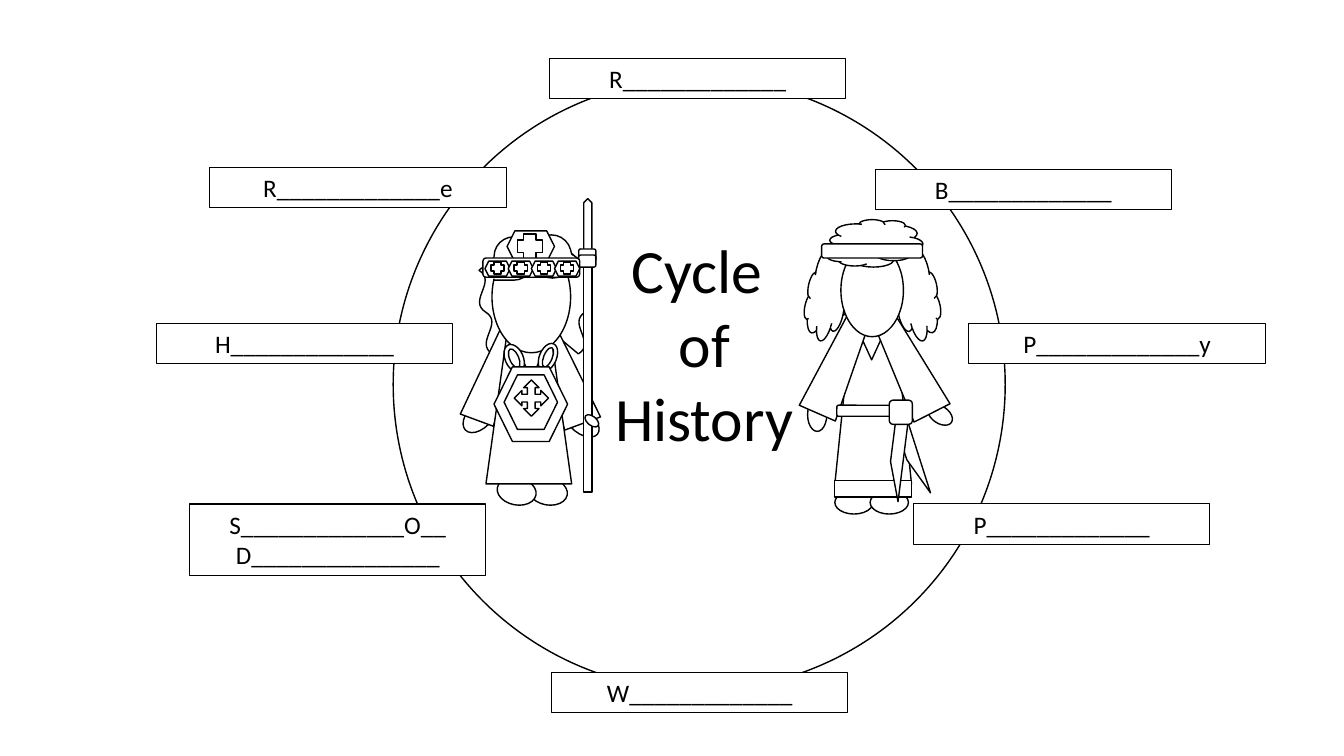
from pptx import Presentation
from pptx.dml.color import RGBColor
from pptx.enum.shapes import MSO_SHAPE
from pptx.enum.text import MSO_ANCHOR, MSO_AUTO_SIZE, PP_ALIGN
from pptx.oxml.ns import qn
from pptx.util import Cm, Pt

CENTER = PP_ALIGN.CENTER
TOP = MSO_ANCHOR.TOP
FIT_SHAPE = MSO_AUTO_SIZE.SHAPE_TO_FIT_TEXT
NO_FIT = MSO_AUTO_SIZE.NONE
OVAL = MSO_SHAPE.OVAL
RECT = MSO_SHAPE.RECTANGLE
ROUNDED = MSO_SHAPE.ROUNDED_RECTANGLE
WAVE = MSO_SHAPE.DOUBLE_WAVE
TRAPEZOID = MSO_SHAPE.TRAPEZOID
TRIANGLE = MSO_SHAPE.ISOSCELES_TRIANGLE
LEAF = MSO_SHAPE.ROUND_2_DIAG_RECTANGLE
DONUT = MSO_SHAPE.DONUT
HEXAGON = MSO_SHAPE.HEXAGON
QUAD_ARROW = MSO_SHAPE.QUAD_ARROW
SPEAR_TIP = MSO_SHAPE.PENTAGON
CROSS = MSO_SHAPE.CROSS
CLOUD = MSO_SHAPE.CLOUD
TAPER = MSO_SHAPE.FLOWCHART_MANUAL_OPERATION
NECKLINE = MSO_SHAPE.FLOWCHART_EXTRACT
STRIPE = MSO_SHAPE.DIAGONAL_STRIPE

BLACK = "000000"
WHITE = "FFFFFF"
FONT = "Calibri"
CM_PER_INCH = 2.54
LABEL_WIDTH = 2.94
LABEL_HEIGHT = 0.4

STAGES = [
    (5.45, 0.58, ["R_____________"]),
    (5.47, 6.67, ["W_____________"]),
    (8.68, 1.68, ["B_____________"]),
    (9.61, 3.21, ["P_____________y"]),
    (9.06, 5, ["P_____________"]),
    (1.88, 5, ["S_____________O__", "D_______________"]),
    (1.55, 3.21, ["H_____________"]),
    (2.08, 1.66, ["R_____________e"]),
]

QUEEN_BODY = [
    (OVAL, 4.56, 4.01, 0.39, 0.24, 315.1),
    (OVAL, 5.58, 4.07, 0.39, 0.23, 38.7, True),
    (TRAPEZOID, 4.73, 3.19, 0.35, 1.01, 20.3, True),
    (TRAPEZOID, 5.43, 3.32, 0.38, 0.91, 339.7),
    (OVAL, 5.24, 4.74, 0.39, 0.27, 10.8, True),
    (OVAL, 4.93, 4.74, 0.39, 0.27, 10.8, True),
    (TRAPEZOID, 4.82, 3.28, 0.85, 1.52, 0, True),
    (TRIANGLE, 5.13, 3.46, 0.28, 0.29, 180, True),
    (OVAL, 4.88, 2.39, 0.78, 1.11, 0, True),
]

QUEEN_REGALIA = [
    (DONUT, 5.01, 3.41, 0.18, 0.29, 336.4),
    (DONUT, 5.35, 3.4, 0.17, 0.29, 22.5),
    (HEXAGON, 4.9, 3.64, 0.73, 0.74),
    (HEXAGON, 5, 3.72, 0.53, 0.54),
    (QUAD_ARROW, 5.1, 3.77, 0.34, 0.36),
    (SPEAR_TIP, 5.55, 2.21, 0.56, 0.08, 270),
    (RECT, 5.79, 2.53, 0.08, 2.35),
    (ROUNDED, 5.74, 2.47, 0.17, 0.12),
    (ROUNDED, 5.74, 2.53, 0.17, 0.12),
    (OVAL, 5.79, 4.13, 0.16, 0.09, 38.7, True),
    (HEXAGON, 5.03, 2.29, 0.47, 0.31),
    (CROSS, 5.13, 2.32, 0.25, 0.25),
    (ROUNDED, 4.79, 2.56, 0.96, 0.19),
]

WARRIOR = [
    (OVAL, 9.24, 3.98, 0.17, 0.27, 304),
    (OVAL, 8.28, 4.87, 0.38, 0.23),
    (OVAL, 8.63, 4.87, 0.38, 0.23),
    (CLOUD, 8.8, 2.41, 0.5, 0.98, 347.3, True),
    (OVAL, 8.01, 3.95, 0.19, 0.33),
    (TAPER, 8.28, 3.31, 0.76, 1.49, 180),
    (RECT, 8.28, 4.77, 0.76, 0.16),
    (NECKLINE, 8.48, 3.21, 0.33, 0.36, 180),
    (TAPER, 8.11, 3.15, 0.39, 0.99, 203.6),
    (TAPER, 8.82, 3.16, 0.4, 0.99, 153, True),
    (CLOUD, 8.01, 2.41, 0.46, 0.98, 12.7),
    (OVAL, 8.34, 2.42, 0.62, 0.92),
    (CLOUD, 8.44, 1.94, 0.47, 0.95, 270, True),
    (ROUNDED, 8.15, 2.42, 1, 0.14),
    (ROUNDED, 8.3, 4.02, 0.7, 0.11),
    (STRIPE, 8.97, 4.08, 0.26, 0.81, 324.5),
    (STRIPE, 8.83, 4.15, 0.26, 0.81, 349.4),
    (ROUNDED, 8.82, 3.97, 0.23, 0.24),
]


def color(hex_value):
    return RGBColor.from_string(hex_value)


def length(inches):
    return Cm(inches * CM_PER_INCH)


def add_part(shapes, preset, left, top, width, height, turn=0, mirrored=False,
             fill=WHITE, line=BLACK, weight=1, adjust=()):
    part = shapes.add_shape(preset, *map(length, (left, top, width, height)))
    part.shadow.inherit = False
    part.rotation = turn
    if mirrored:
        part._element.spPr.find(qn("a:xfrm")).set("flipH", "1")
    for index, value in enumerate(adjust):
        part.adjustments[index] = value
    if fill:
        part.fill.solid()
        part.fill.fore_color.rgb = color(fill)
    else:
        part.fill.background()
    if line:
        part.line.color.rgb = color(line)
        part.line.width = Pt(weight)
    else:
        part.line.fill.background()
    return part


def add_parts(shapes, parts):
    for part in parts:
        add_part(shapes, *part)


def write_lines(frame, lines, size):
    frame.word_wrap = True
    for index, text in enumerate(lines):
        paragraph = frame.add_paragraph() if index else frame.paragraphs[0]
        paragraph.alignment = CENTER
        run = paragraph.add_run()
        run.text = text
        run.font.name = FONT
        run.font.size = Pt(size)
        run.font.color.rgb = color(BLACK)


def place_title(title):
    title.left, title.top, title.width, title.height = map(
        length, (5.81, 2.25, 2.35, 2.32))
    frame = title.text_frame
    frame.vertical_anchor = TOP
    frame.auto_size = NO_FIT
    write_lines(frame, ["Cycle ", "of History"], 44)


def add_stage(shapes, left, top, lines):
    height = LABEL_HEIGHT + 0.31 * (len(lines) - 1)
    stage = add_part(shapes, RECT, left, top, LABEL_WIDTH, height, weight=0.75)
    stage.text_frame.auto_size = FIT_SHAPE
    write_lines(stage.text_frame, lines, 18)


def add_queen_hair(queen):
    for left, turn, mirrored in [(4.45, 80.9, False), (5.12, 279.1, True)]:
        add_part(queen, WAVE, left, 2.74, 1.05, 0.45, turn, mirrored,
                 adjust=(0.107, 0.1))


def add_queen_fringe(queen):
    add_part(queen, LEAF, 4.9, 2.35, 0.39, 0.43, adjust=(0.5, 0))
    add_part(queen, LEAF, 5.26, 2.35, 0.43, 0.39, 74.8, adjust=(0.5, 0))
    add_part(queen, OVAL, 4.79, 2.5, 0.45, 0.19, 315.4, line=None)
    add_part(queen, OVAL, 5.42, 2.54, 0.45, 0.19, 43.1, line=None)


def add_crown_jewels(queen):
    for index in range(4):
        left = 4.81 + 0.23 * index
        add_part(queen, HEXAGON, left, 2.59, 0.25, 0.15)
        add_part(queen, CROSS, left + 0.06, 2.6, 0.13, 0.12)


def main():
    deck = Presentation()
    deck.slide_width, deck.slide_height = length(13.33), length(7.5)
    slide = deck.slides.add_slide(deck.slide_layouts[5])
    shapes = slide.shapes
    place_title(shapes.title)
    add_part(shapes, OVAL, 3.9, 0.78, 6.07, 6.07, fill=None)
    for stage in STAGES:
        add_stage(shapes, *stage)
    queen = shapes.add_group_shape().shapes
    add_queen_hair(queen)
    add_parts(queen, QUEEN_BODY)
    add_queen_fringe(queen)
    add_parts(queen, QUEEN_REGALIA)
    add_crown_jewels(queen)
    add_parts(shapes.add_group_shape().shapes, WARRIOR)
    deck.save("out.pptx")


if __name__ == "__main__":
    main()
